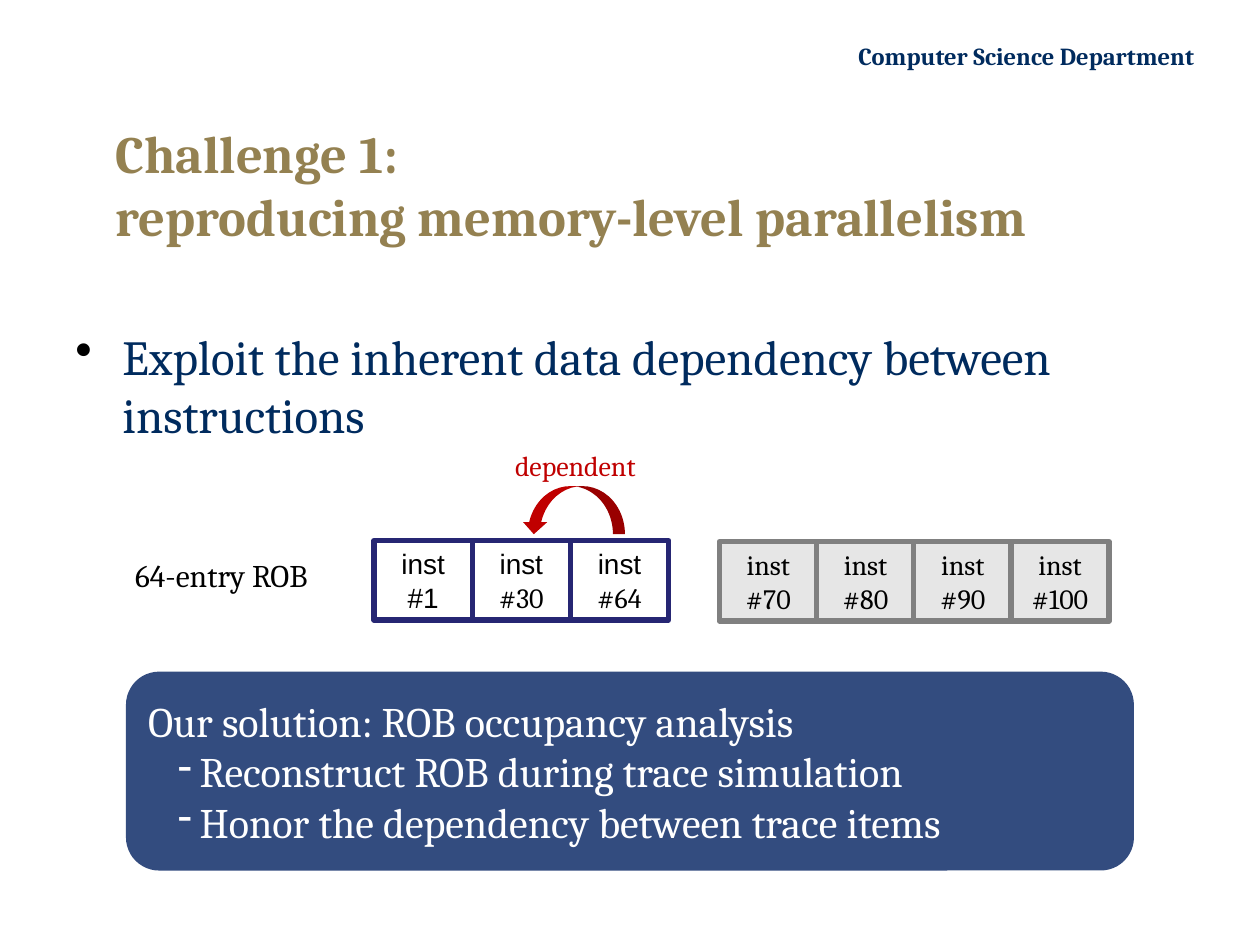
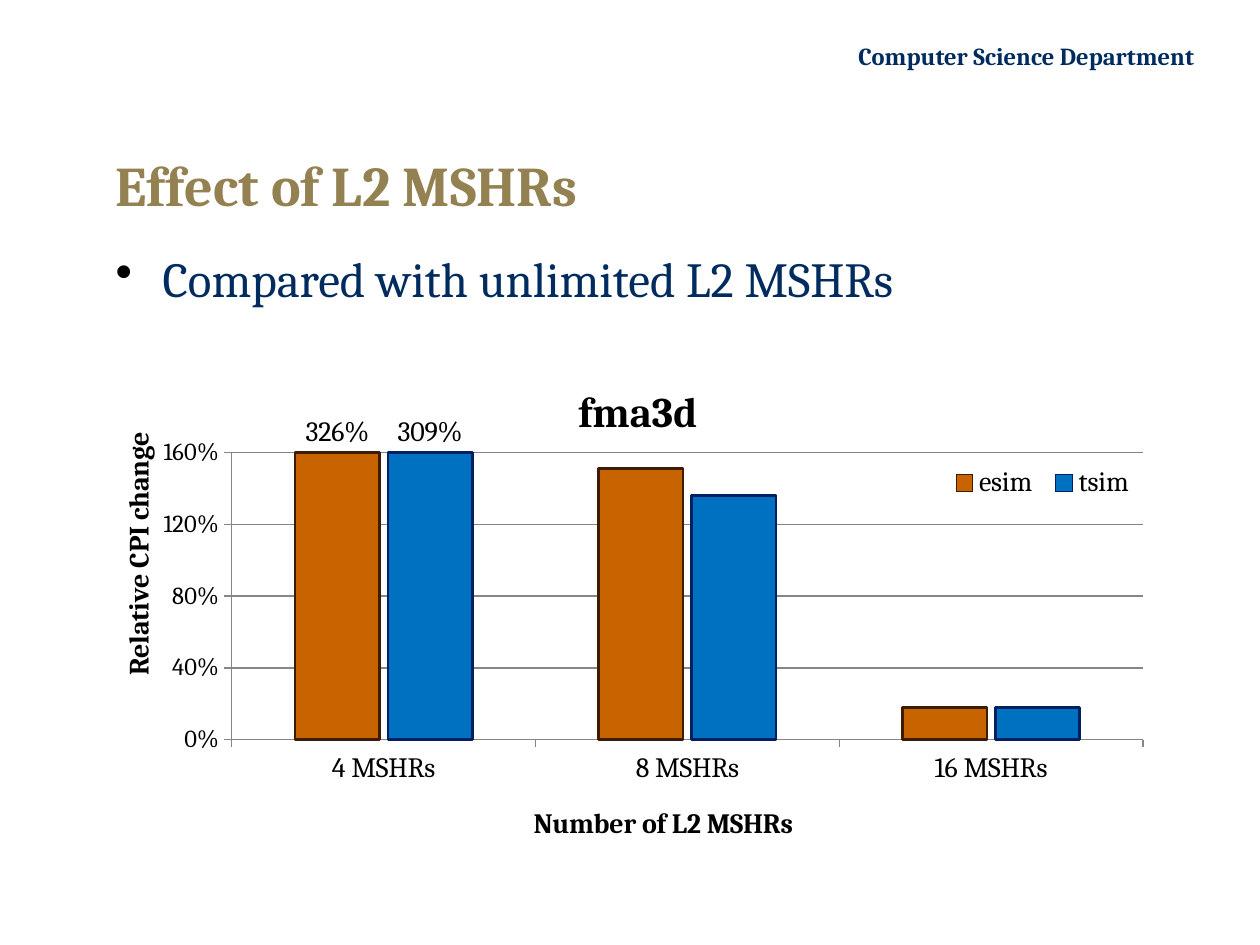
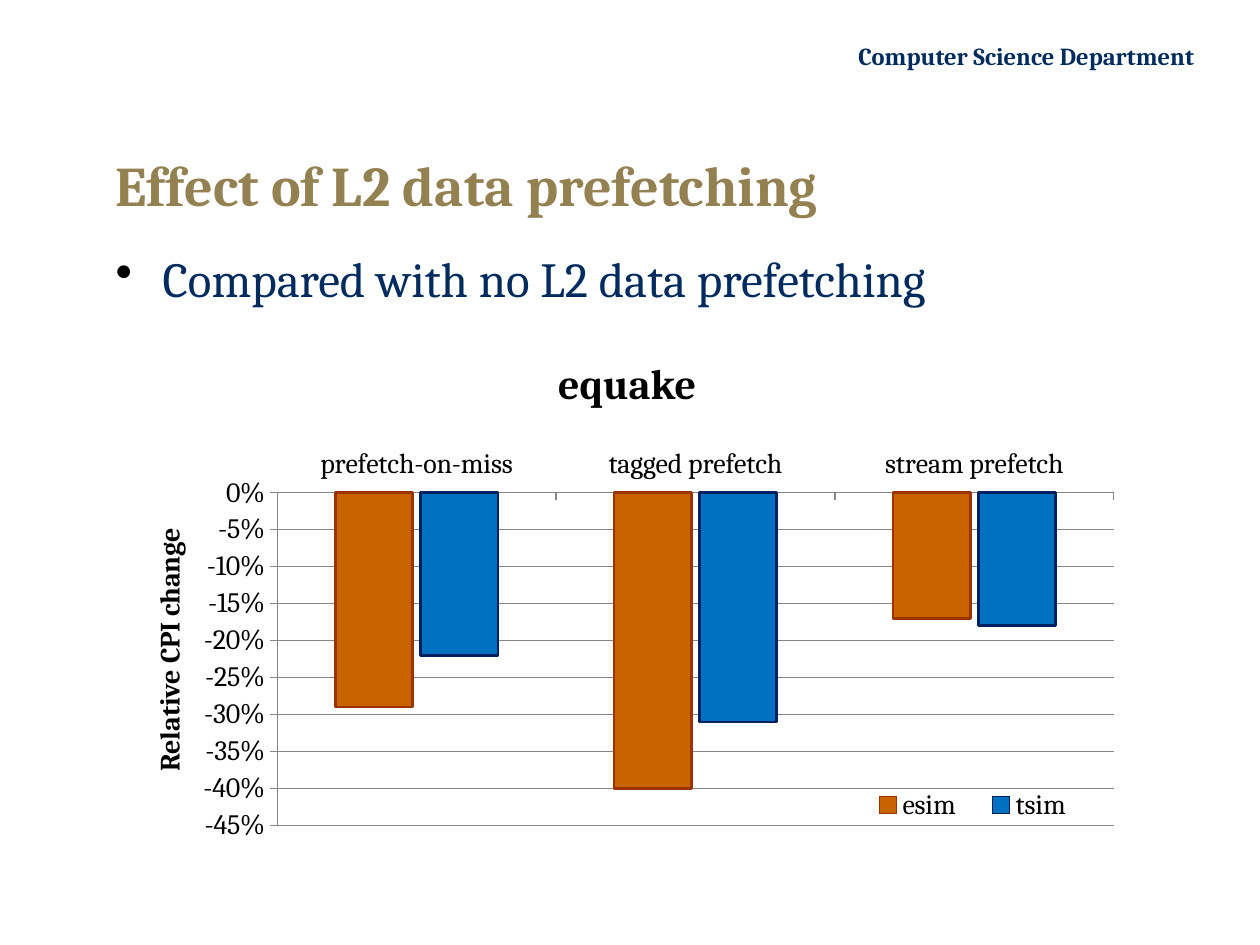
from dataclasses import dataclass

from lxml import etree
from pptx import Presentation
from pptx import util as u
from pptx.chart import data as cd
from pptx.dml.color import RGBColor
from pptx.enum import chart as ch, shapes, text
from pptx.oxml.ns import qn


@dataclass(frozen=True)
class Theme:
    """Colours, fonts and type sizes of the deck."""
    serif: str = "Cambria"
    sans: str = "Arial"
    navy: str = "002B5E"
    gold: str = "948151"
    black: str = "000000"
    white: str = "FFFFFF"
    red: str = "C00000"
    panel: str = "002060"
    rob_line: str = "262673"
    wait_fill: str = "E6E6E6"
    wait_line: str = "808080"
    grid: str = "868686"
    orange: str = "C86400"
    orange_dark: str = "3C1C02"
    orange_rust: str = "993300"
    blue: str = "0070C0"
    header: float = 14
    title: float = 32
    long_title: float = 30
    body: float = 28
    panel_text: float = 24
    label: float = 18
    small: float = 16
    tick: float = 14
    chart: float = 10


T = Theme()


@dataclass(frozen=True)
class Box:
    """A rectangle in centimetres."""
    x: float
    y: float
    w: float
    h: float

    def at(self, dx, dy, w, h):
        """Return a rectangle offset from this one."""
        return Box(self.x + dx, self.y + dy, w, h)

    def place(self):
        """Return left, top, width and height as lengths."""
        return [u.Cm(v) for v in (self.x, self.y, self.w, self.h)]


HEADER = Box(10.64, 0.71, 13.69, 0.86)
TITLE = Box(2.08, 2.54, 22.02, 2.34)
BODY = Box(2.08, 4.88, 22.02, 2)


def rgb(c):
    """Turn a hex string into a colour."""
    return RGBColor.from_string(c)


def sub(parent, tag, **attrs):
    """Append an XML child with attributes."""
    el = etree.SubElement(parent, qn(tag))
    for name, value in attrs.items():
        el.set(name, str(value))
    return el


def set_font(f, size, color=T.black, bold=False, font=T.serif):
    """Format a font."""
    f.name, f.size, f.bold = font, u.Pt(size), bold
    f.color.rgb = rgb(color)


def set_line(line, color, width):
    """Format an outline."""
    line.color.rgb = rgb(color)
    line.width = u.Pt(width)


def write(p, content, align="LEFT", bullet=None, hang=0, indent=0, after=0, **font):
    """Write text into a paragraph; a newline becomes a line break."""
    p.alignment = getattr(text.PP_ALIGN, align)
    if bullet:
        pPr = p._p.get_or_add_pPr()
        pPr.set("marL", str(u.Cm(indent + hang)))
        pPr.set("indent", str(-u.Cm(hang)))
        color = sub(pPr, "a:buClr")
        sub(color, "a:srgbClr", val=T.white if bullet == "-" else T.black)
        sub(pPr, "a:buChar", char=bullet)
    p.space_after = u.Pt(after)
    for i, line in enumerate(content.split("\n")):
        if i:
            p.add_line_break()
        r = p.add_run()
        r.text = line
        set_font(r.font, **font)


def add_text(s, box, content, anchor="TOP", **fmt):
    """Add a wrapped text box with one paragraph."""
    tf = s.shapes.add_textbox(*box.place()).text_frame
    tf.word_wrap = True
    tf.vertical_anchor = getattr(text.MSO_ANCHOR, anchor)
    write(tf.paragraphs[0], content, **fmt)


def add_shape(s, kind, box, fill=None, line=None, width=3):
    """Add a flat preset shape."""
    sp = s.shapes.add_shape(getattr(shapes.MSO_SHAPE, kind), *box.place())
    sp.shadow.inherit = False
    if fill:
        sp.fill.solid()
        sp.fill.fore_color.rgb = rgb(fill)
    else:
        sp.fill.background()
    if line:
        set_line(sp.line, line, width)
    else:
        sp.line.fill.background()
    return sp


def new_slide(prs, title, body, title_size=T.title, body_box=BODY):
    """Add a slide with its header, title and bullet."""
    s = prs.slides.add_slide(prs.slide_layouts[6])
    add_text(s, HEADER, "Computer Science Department", align="RIGHT",
             size=T.header, color=T.navy, bold=True)
    add_text(s, TITLE, title, anchor="MIDDLE", size=title_size, color=T.gold, bold=True)
    add_text(s, body_box, body, bullet="•", hang=0.95, after=6, size=T.body, color=T.navy)
    return s


def add_cells(s, box, pitch, entries, line, fill=None):
    """Draw a row of instruction cells, each with a font per line."""
    for i, (number, fonts) in enumerate(entries):
        sp = add_shape(s, "RECTANGLE", box.at(i * pitch, 0, 1.98, box.h), fill, line)
        tf = sp.text_frame
        for j, (line_text, font) in enumerate(zip(("inst", number), fonts)):
            p = tf.add_paragraph() if j else tf.paragraphs[0]
            write(p, line_text, align="CENTER", size=T.small, font=font)


def add_rob(s, box):
    """Draw the reorder buffer, the waiting instructions and the dependency."""
    add_text(s, box.at(0, 2, 4.57, 1), "64-entry ROB", anchor="MIDDLE",
             align="CENTER", size=T.label)
    mixed, serif = (T.sans, T.serif), (T.serif, T.serif)
    add_cells(s, box.at(5.36, 1.8, 5.94, 1.6), 1.98,
              [("#1", (T.sans, T.sans)), ("#30", mixed), ("#64", mixed)], T.rob_line)
    add_cells(s, box.at(12.32, 1.82, 7.86, 1.6), 1.96,
              [(n, serif) for n in ("#70", "#80", "#90", "#100")], T.wait_line, T.wait_fill)
    add_text(s, box.at(7.83, 0, 3.18, 0.56), "dependent", anchor="MIDDLE",
             align="CENTER", size=T.small, color=T.red)
    arrow = add_shape(s, "CURVED_DOWN_ARROW", box.at(8.34, 0.7, 2.08, 0.97), T.red)
    arrow._element.spPr.get_or_add_xfrm().set("flipH", "1")


def add_solution(s, box, heading, items):
    """Draw the translucent panel with a heading and dashed items."""
    sp = add_shape(s, "ROUNDED_RECTANGLE", box, T.panel)
    sub(sp._element.spPr.find(".//" + qn("a:srgbClr")), "a:alpha", val=80000)
    tf = sp.text_frame
    tf.vertical_anchor = text.MSO_ANCHOR.MIDDLE
    write(tf.paragraphs[0], heading, size=T.panel_text, color=T.white)
    for item in items:
        write(tf.add_paragraph(), item, bullet="-", hang=0.44, indent=0.6,
              size=T.panel_text, color=T.white)


def set_layout(el, x, y, w=None, h=None, inner=False):
    """Fix the place of a chart element as fractions of the chart."""
    for old in el.findall(qn("c:layout")):
        el.remove(old)
    layout = etree.Element(qn("c:layout"))
    manual = sub(layout, "c:manualLayout")
    if inner:
        sub(manual, "c:layoutTarget", val="inner")
    sub(manual, "c:xMode", val="edge")
    sub(manual, "c:yMode", val="edge")
    for tag, value in zip("xywh", (x, y, w, h)):
        if value is not None:
            sub(manual, "c:" + tag, val=value)
    before = [c for c in el if c.tag in (qn("c:tx"), qn("c:legendPos"))]
    el.insert(len(before), layout)


def set_title(title, content, size, x, y, rotate=False):
    """Write a bold chart or axis title at a fixed place."""
    tf = title.text_frame
    write(tf.paragraphs[0], content, align="CENTER", size=size, bold=True)
    if rotate:
        tf._txBody.bodyPr.set("rot", "-5400000")
        tf._txBody.bodyPr.set("vert", "horz")
    set_layout(title._element, x, y)


def add_cpi_chart(s, box, cats, series, plot, legend, title_at, scale, tick_size):
    """Add a column chart of relative CPI change for both simulators."""
    data = cd.CategoryChartData(number_format="0%")
    data.categories = cats
    for name, vals, _ in series:
        data.add_series(name, vals)
    chart = s.shapes.add_chart(ch.XL_CHART_TYPE.COLUMN_CLUSTERED, *box.place(), data).chart
    chart.has_title = False
    set_font(chart.font, T.chart)
    chart.has_legend = True
    chart.legend.position = ch.XL_LEGEND_POSITION.RIGHT
    chart.legend.include_in_layout = False
    set_font(chart.legend.font, T.small)
    set_layout(chart.legend._element, *legend)
    set_layout(chart._chartSpace.chart.plotArea, *plot, inner=True)

    bars = chart.plots[0]
    bars.vary_by_categories = False
    bars.gap_width, bars.overlap = 150, -10
    for ser, fill, (_, _, line) in zip(bars.series, (T.orange, T.blue), series):
        ser.invert_if_negative = False
        ser.format.fill.solid()
        ser.format.fill.fore_color.rgb = rgb(fill)
        set_line(ser.format.line, line, 1.5)

    va, ca = chart.value_axis, chart.category_axis
    va.minimum_scale, va.maximum_scale, va.major_unit = scale
    va.tick_labels.number_format = "0%"
    va.tick_labels.number_format_is_linked = False
    va.has_major_gridlines = True
    set_line(va.major_gridlines.format.line, T.grid, 0.75)
    for axis, size in ((va, tick_size), (ca, T.small)):
        axis.major_tick_mark = ch.XL_TICK_MARK.OUTSIDE
        set_line(axis.format.line, T.grid, 0.75)
        set_font(axis.tick_labels.font, size)
    set_title(va.axis_title, "Relative CPI change", T.small, *title_at, rotate=True)
    return chart


def parallelism_slide(prs):
    """Build the slide on memory-level parallelism."""
    s = new_slide(prs, "Challenge 1:\nreproducing memory-level parallelism",
                  "Exploit the inherent data dependency between instructions",
                  T.long_title, Box(1.27, 6.45, 22.76, 2.6))
    add_rob(s, Box(2.18, 9.1, 20.18, 3.42))
    add_solution(s, Box(2.54, 13.54, 20.32, 4.01), "Our solution: ROB occupancy analysis",
                 ["Reconstruct ROB during trace simulation",
                  "Honor the dependency between trace items"])


def mshr_slide(prs):
    """Build the slide on miss status holding registers."""
    s = new_slide(prs, "Effect of L2 MSHRs", "Compared with unlimited L2 MSHRs")
    chart = add_cpi_chart(
        s, Box(2.11, 6.99, 21.36, 10.16), ["4 MSHRs", "8 MSHRs", "16 MSHRs"],
        [("esim", (1.6, 1.51, 0.18), T.orange_dark), ("tsim", (1.6, 1.36, 0.18), T.panel)],
        plot=(0.12, 0.21, 0.86, 0.57), legend=(0.79, 0.23, 0.19, 0.08),
        title_at=(0.01, 0.16), scale=(0, 1.6, 0.4), tick_size=T.tick)
    chart.has_title = True
    set_title(chart.chart_title, "fma3d", T.panel_text, 0.44, 0.06)
    set_title(chart.category_axis.axis_title, "Number of L2 MSHRs", T.small, 0.4, 0.9)
    for ser, value in zip(chart.plots[0].series, ("326%", "309%")):
        label = ser.points[0].data_label
        write(label.text_frame.paragraphs[0], value, align="CENTER", size=T.small)
        label.position = ch.XL_LABEL_POSITION.OUTSIDE_END


def prefetch_slide(prs):
    """Build the slide on data prefetching."""
    s = new_slide(prs, "Effect of L2 data prefetching",
                  "Compared with no L2 data prefetching")
    box = Box(2.54, 6.99, 20.32, 10.16)
    chart = add_cpi_chart(
        s, box, ["prefetch-on-miss", "tagged prefetch", "stream prefetch"],
        [("esim", (-0.29, -0.4, -0.17), T.orange_rust),
         ("tsim", (-0.22, -0.31, -0.18), T.panel)],
        plot=(0.15, 0.29, 0.83, 0.66), legend=(0.72, 0.87, 0.24, 0.08),
        title_at=(0.02, 0.35), scale=(-0.45, 0, 0.05), tick_size=T.small)
    chart.category_axis.tick_label_position = ch.XL_TICK_LABEL_POSITION.HIGH
    add_text(s, box.at(8.46, 0.2, 4.01, 1.07), "equake", anchor="MIDDLE",
             size=T.panel_text, bold=True)


def main():
    """Build and save the deck."""
    prs = Presentation()
    prs.slide_width, prs.slide_height = u.Cm(25.4), u.Cm(19.05)
    parallelism_slide(prs)
    mshr_slide(prs)
    prefetch_slide(prs)
    prs.save("out.pptx")


if __name__ == "__main__":
    main()
